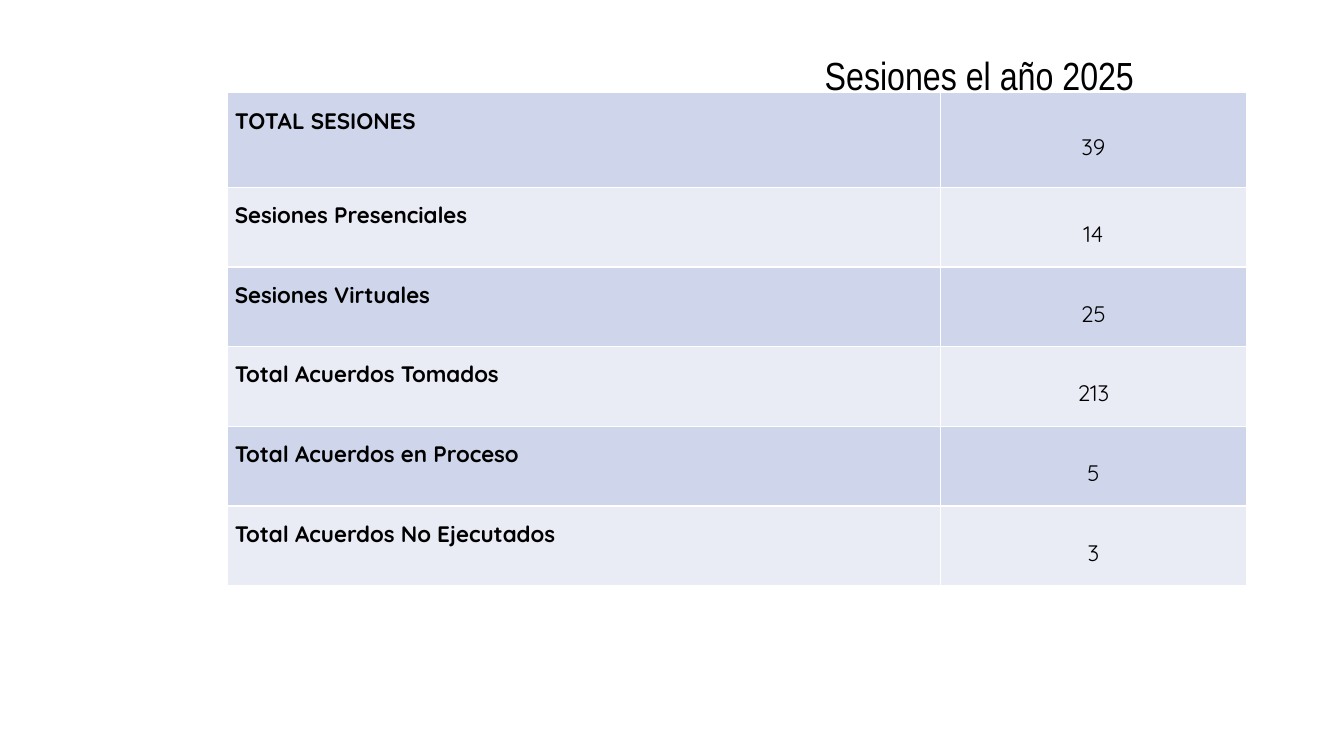
from pptx import Presentation
from pptx.dml import color
from pptx.enum import text
from pptx.util import Inches, Pt

ROWS = [
    ("TOTAL SESIONES", "39"),
    ("Sesiones Presenciales", "14"),
    ("Sesiones Virtuales", "25"),
    ("Total Acuerdos Tomados", "213"),
    ("Total Acuerdos en Proceso", "5"),
    ("Total Acuerdos No Ejecutados", "3"),
]
BANDS = ("CFD5EA", "E9EBF5")


def rgb(code):
    """Turn a hex string into a colour."""
    return color.RGBColor.from_string(code)


def style(para, face, size, align, bold=False):
    """Set the font and alignment of a paragraph."""
    para.alignment = align
    para.font.name = face
    para.font.size = Pt(size)
    para.font.bold = bold
    para.font.color.rgb = rgb("000000")


def add_title(slide, words):
    """Place and format the slide title."""
    title = slide.shapes.title
    title.left, title.top = Inches(8.08), Inches(0.46)
    title.width, title.height = Inches(3.51), Inches(0.57)
    frame = title.text_frame
    frame.text = words
    frame.word_wrap = False
    frame.auto_size = text.MSO_AUTO_SIZE.SHAPE_TO_FIT_TEXT
    frame.vertical_anchor = text.MSO_ANCHOR.TOP
    style(frame.paragraphs[0], "Arial Narrow", 28, text.PP_ALIGN.LEFT)


def fill_cell(cell, words, band, align, anchor, bold):
    """Write one table cell on its band colour."""
    cell.fill.solid()
    cell.fill.fore_color.rgb = rgb(band)
    cell.margin_left = cell.margin_right = Inches(0.07)
    cell.margin_top = cell.margin_bottom = 0
    cell.vertical_anchor = anchor
    cell.text = words
    para = cell.text_frame.paragraphs[0]
    para.line_spacing = 1.5
    para.space_after = Pt(8)
    style(para, "Quicksand", 16, align, bold)


def add_counts(slide):
    """Add the table of sessions and agreements."""
    table = slide.shapes.add_table(
        len(ROWS), 2, Inches(2.26), Inches(0.92), Inches(10.1), Inches(4.88)
    ).table
    table.first_row = False
    table.horz_banding = False
    for col, width in zip(table.columns, (7.07, 3.03)):
        col.width = Inches(width)
    for i, (label, count) in enumerate(ROWS):
        table.rows[i].height = Inches(0.79 if i else 0.94)
        band = BANDS[i % 2]
        align = text.PP_ALIGN.JUSTIFY if i else text.PP_ALIGN.LEFT
        fill_cell(table.cell(i, 0), label, band, align, text.MSO_ANCHOR.TOP, True)
        fill_cell(table.cell(i, 1), count, band, text.PP_ALIGN.CENTER,
                  text.MSO_ANCHOR.MIDDLE, False)


def main():
    """Build and save the slide."""
    deck = Presentation()
    deck.slide_width, deck.slide_height = Inches(13.33), Inches(7.5)
    slide = deck.slides.add_slide(deck.slide_layouts[5])
    add_title(slide, "Sesiones el año 2025")
    add_counts(slide)
    deck.save("out.pptx")


if __name__ == "__main__":
    main()
